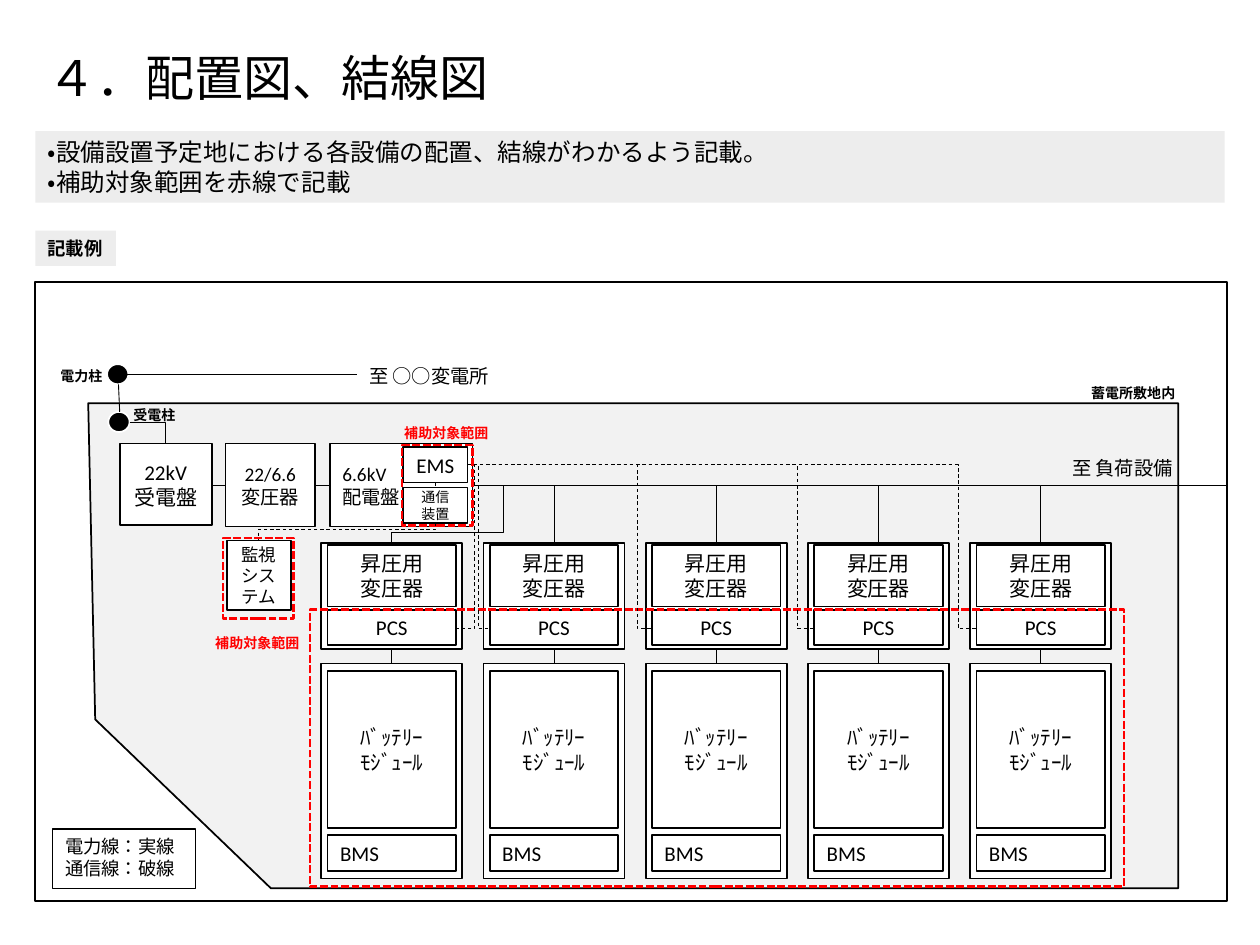
from collections import namedtuple

from lxml.etree import SubElement
from pptx import Presentation
from pptx.dml.color import RGBColor
from pptx.enum.dml import MSO_LINE
from pptx.enum.lang import MSO_LANGUAGE_ID
from pptx.enum.shapes import MSO_CONNECTOR, MSO_SHAPE
from pptx.enum.text import MSO_ANCHOR, MSO_AUTO_SIZE, PP_ALIGN
from pptx.oxml.ns import qn
from pptx.util import Pt

BLACK = RGBColor(0x00, 0x00, 0x00)
WHITE = RGBColor(0xFF, 0xFF, 0xFF)
RED = RGBColor(0xFF, 0x00, 0x00)
SITE_GRAY = RGBColor(0xF2, 0xF2, 0xF2)
NOTE_GRAY = RGBColor(0xED, 0xED, 0xED)
FONT = "Calibri"

UNIT_COUNT = 5
UNIT_PITCH = 92.7
SUBSIDY_LABEL = "補助対象範囲"


class Box(namedtuple("Box", "left top width height")):
    def inside(self, x, y, width, height):
        """Box at an offset from this box's top left corner."""
        return Box(self.left + x, self.top + y, width, height)

    def emu(self):
        return [Pt(value) for value in self]


def write_text(shape, text, size=12, color=BLACK, bold=False, align=PP_ALIGN.LEFT,
               anchor=MSO_ANCHOR.TOP, wrap=True, grow=False, spacing=None):
    frame = shape.text_frame
    frame.text = text
    frame.word_wrap = wrap
    frame.vertical_anchor = anchor
    frame.auto_size = MSO_AUTO_SIZE.SHAPE_TO_FIT_TEXT if grow else MSO_AUTO_SIZE.NONE
    for paragraph in frame.paragraphs:
        paragraph.alignment = align
        if spacing:
            paragraph.line_spacing = spacing
        for run in paragraph.runs:
            run.font.name = FONT
            run.font.size = Pt(size)
            run.font.bold = bold
            run.font.color.rgb = color
            run.font.language_id = MSO_LANGUAGE_ID.JAPANESE


def style_shape(shape, fill, line, width=1, dash=None):
    shape.shadow.inherit = False
    if fill is None:
        shape.fill.background()
    else:
        shape.fill.solid()
        shape.fill.fore_color.rgb = fill
    if line is None:
        shape.line.fill.background()
        return
    shape.line.color.rgb = line
    shape.line.width = Pt(width)
    if dash:
        shape.line.dash_style = dash


def add_box(slide, box, fill=WHITE, line=BLACK, preset=MSO_SHAPE.RECTANGLE, **style):
    shape = slide.shapes.add_shape(preset, *box.emu())
    style_shape(shape, fill, line, **style)
    return shape


def add_device(slide, box, text, size=12, align=PP_ALIGN.CENTER):
    write_text(add_box(slide, box), text, size=size, align=align, anchor=MSO_ANCHOR.MIDDLE)


def add_label(slide, box, text, size=8, bold=True, color=BLACK):
    label = slide.shapes.add_textbox(*box.emu())
    write_text(label, text, size=size, bold=bold, color=color, wrap=False, grow=True)


def add_subsidy_frame(slide, box):
    add_box(slide, box, fill=None, line=RED, width=1.5, dash=MSO_LINE.SQUARE_DOT)


def add_wire(slide, start, end, preset="line", bends=(), dashed=False):
    """Connect two points; bends are the fractions at which an elbow turns."""
    kind = MSO_CONNECTOR.STRAIGHT if preset == "line" else MSO_CONNECTOR.ELBOW
    wire = slide.shapes.add_connector(kind, *(Pt(v) for v in (*start, *end)))
    wire.line.color.rgb = BLACK
    wire.line.width = Pt(0.5)
    if dashed:
        wire.line.dash_style = MSO_LINE.DASH
    properties = wire._element.spPr
    geometry = properties.find(qn("a:prstGeom"))
    geometry.set("prst", preset)
    for number, bend in enumerate(bends, 1):
        SubElement(geometry.find(qn("a:avLst")), qn("a:gd"),
                   name=f"adj{number}", fmla=f"val {round(bend * 100000)}")
    SubElement(properties, qn("a:effectLst"))


def draw_title(slide, box):
    title = slide.shapes.title
    title.left, title.top, title.width, title.height = box.emu()
    write_text(title, "４．配置図、結線図", size=28, anchor=MSO_ANCHOR.MIDDLE, spacing=0.9)


def draw_note(slide, box, text, **text_format):
    write_text(add_box(slide, box, fill=NOTE_GRAY, line=None), text, grow=True, **text_format)


def draw_site(slide, box):
    corners = [(0, 0), (box.width, 0), (box.width, box.height), (104.4, box.height), (4, 180.7)]
    points = [(Pt(box.left + x), Pt(box.top + y)) for x, y in corners]
    outline = slide.shapes.build_freeform(*points[0])
    outline.add_line_segments(points[1:], close=True)
    style_shape(outline.convert_to_shape(), SITE_GRAY, BLACK)
    add_label(slide, box.inside(566, -14.4, 63.4, 15.8), "蓄電所敷地内")


def draw_battery_unit(slide, box):
    middle = box.left + box.width / 2
    inner = box.width - 7.2
    add_box(slide, box.inside(0, 0, box.width, 60.5))
    add_box(slide, box.inside(0, 68.8, box.width, box.height - 68.8))
    add_wire(slide, (middle, box.top + 60.5), (middle, box.top + 68.8))
    add_device(slide, box.inside(3.6, 38.2, inner, 20.2), "PCS")
    add_device(slide, box.inside(3.6, 1, inner, 35.3), "昇圧用\n変圧器")
    add_device(slide, box.inside(3.6, 73, inner, 90), "ﾊﾞｯﾃﾘｰ\nﾓｼﾞｭｰﾙ")
    add_device(slide, box.inside(3.6, 166.7, inner, 20.9), "BMS", align=PP_ALIGN.LEFT)


def draw_supply_row(slide, box):
    add_device(slide, box.inside(0, 0, 52.6, 46.8), "22kV\n受電盤")
    add_device(slide, box.inside(60.5, 0, 51.1, box.height), "22/6.6\n変圧器", size=11)
    add_device(slide, box.inside(120.2, 0, 81.4, box.height), "6.6kV\n配電盤", size=11,
               align=PP_ALIGN.LEFT)
    bus_y = box.top + box.height / 2
    for start, end in ((52.6, 60.5), (111.6, 120.2)):
        add_wire(slide, (box.left + start, bus_y), (box.left + end, bus_y))
    add_device(slide, box.inside(162, 2.2, 36.7, 20.2), "EMS")
    add_device(slide, box.inside(162, 25.2, 36.7, 20.2), "通信装置", size=8)
    add_subsidy_frame(slide, box.inside(161.3, 0.8, 40.3, 46.1))
    add_label(slide, box.inside(155.5, -14.4, 63.4, 15.8), SUBSIDY_LABEL, color=RED)


def draw_poles(slide, box):
    pole = (12.2, 11.5)
    for x, y in ((0, 0), (0.7, 27.3)):
        add_box(slide, box.inside(x, y, *pole), fill=BLACK, line=WHITE, preset=MSO_SHAPE.OVAL)
    left, top = box.left, box.top
    add_wire(slide, (left + 6.5, top + 11.5), (left + 7.2, top + 27.3))
    add_wire(slide, (left + 12.9, top + 33.1), (left + 33.1, top + 45.3), "bentConnector2")
    add_wire(slide, (left + 6.5, top + 5.7), (left + 142.6, top + 5.7))
    add_label(slide, box.inside(-33.8, -1.4, 38.9, 15.8), "電力柱")
    add_label(slide, box.inside(7.9, 20.9, 38.9, 15.8), "受電柱")
    add_label(slide, box.inside(142.6, -3.6, 83.5, 19.4), "至 ○○変電所", size=11, bold=False)


def draw_monitor(slide, box):
    add_device(slide, box.inside(2.2, 1.5, 36.7, 39.6), "監視\nシステム", size=10)
    add_subsidy_frame(slide, box)
    add_label(slide, box.inside(-11.5, 51.9, 63.4, 15.8), SUBSIDY_LABEL, color=RED)


def draw_power_wires(slide, units, bus_start, bus_end):
    add_wire(slide, bus_start, (units[0].left + 40.3, units[0].top), "bentConnector4",
             bends=(-0.39, 0.82))
    for unit in units[1:]:
        add_wire(slide, bus_start, (unit.left + 40.3, unit.top), "bentConnector2")
    add_wire(slide, (units[-1].left + 40.3, bus_start[1]), bus_end)


def draw_signal_wires(slide, units, ems, monitor_top):
    """Dashed lines from the EMS to every PCS, the comms device and the monitor."""
    trunks = (271.4, 273.4, 364.2, 455.6, 547.6)
    for number, (unit, trunk) in enumerate(zip(units, trunks)):
        pcs_x = unit.left + (3.6 if number else unit.width - 3.6)
        bend = (trunk - ems[0]) / (pcs_x - ems[0])
        add_wire(slide, ems, (pcs_x, unit.top + 49), "bentConnector3", bends=(bend,), dashed=True)
    middle = ems[0] - 18
    add_wire(slide, (middle, ems[1] + 10), (middle, ems[1] + 13), dashed=True)
    add_wire(slide, (middle, ems[1] + 33.1), monitor_top, "bentConnector4", bends=(0, 0.37),
             dashed=True)


def draw_diagram(slide, box):
    draw_site(slide, box.inside(30.2, 69.1, 622.9, 277.2))
    units = [box.inside(163.4 + UNIT_PITCH * i, 149, 80.6, 191.8) for i in range(UNIT_COUNT)]
    supply = box.inside(48.2, 92.1, 201.6, 47.5)
    bus_y = supply.top + supply.height / 2
    draw_power_wires(slide, units, (supply.left + supply.width, bus_y),
                     (box.left + box.width, bus_y))
    for unit in units:
        draw_battery_unit(slide, unit)
    add_subsidy_frame(slide, box.inside(157, 187.1, 465.1, 158.4))
    draw_supply_row(slide, supply)
    draw_poles(slide, box.inside(41, 46.8, 34, 46))
    monitor = box.inside(107.2, 146.1, 40.3, 46.1)
    draw_monitor(slide, monitor)
    add_label(slide, box.inside(585.3, 95.7, 72.7, 20.9), "至 負荷設備", size=11, bold=False)
    add_box(slide, box, fill=None)
    draw_signal_wires(slide, units, (supply.left + 198.7, supply.top + 12.3),
                      (monitor.left + 20.2, monitor.top + 1.5))
    legend = add_box(slide, box.inside(10, 312.5, 81.4, 33.8), fill=None, width=0.75)
    write_text(legend, "電力線：実線\n通信線：破線", size=10.5, wrap=False, grow=True)


def main():
    presentation = Presentation()
    presentation.slide_width, presentation.slide_height = Pt(720), Pt(540)
    slide = presentation.slides.add_slide(presentation.slide_layouts[5])
    draw_title(slide, Box(20.2, 16.6, 679.7, 59))
    draw_diagram(slide, Box(20.2, 161.3, 681.1, 353.5))
    draw_note(slide, Box(20.2, 74.9, 679.7, 41),
              "・設備設置予定地における各設備の配置、結線がわかるよう記載。\n・補助対象範囲を赤線で記載", size=14)
    draw_note(slide, Box(20.2, 131.8, 46.1, 20.2), "記載例", size=10.5, bold=True)
    presentation.save("out.pptx")


if __name__ == "__main__":
    main()
